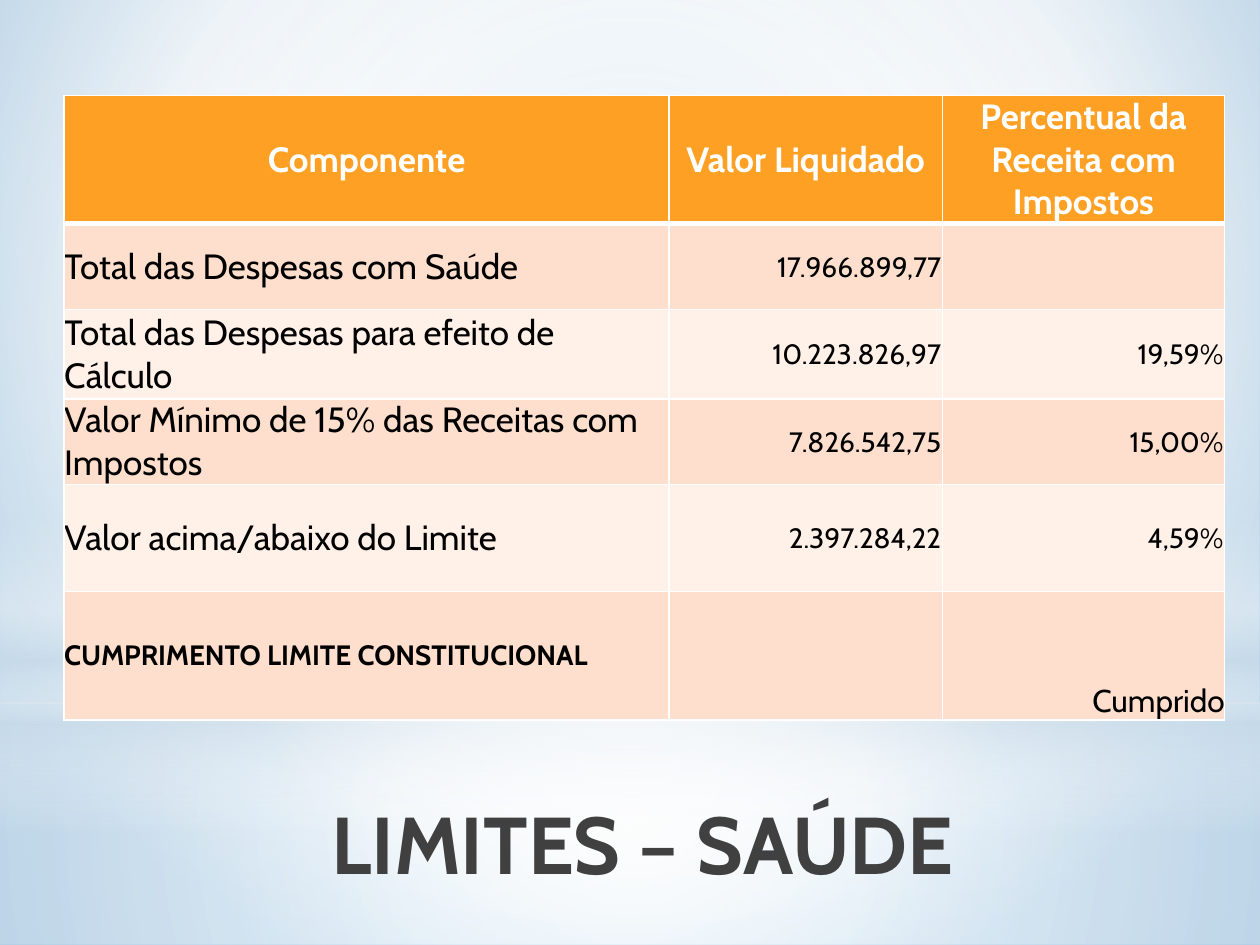
from dataclasses import dataclass
from lxml.etree import SubElement
from pptx import Presentation
from pptx.dml.color import RGBColor
from pptx.enum.shapes import MSO_SHAPE
from pptx.enum.text import MSO_ANCHOR, MSO_AUTO_SIZE, PP_ALIGN
from pptx.oxml import parse_xml
from pptx.oxml.ns import nsdecls, qn
from pptx.util import Inches, Pt


@dataclass(frozen=True)
class Theme:
    font: str = "Cabin"
    ink: str = "000000"
    white: str = "FFFFFF"
    mist: str = "CCDDEA"
    gray: str = "404040"
    head: str = "FDA023"
    bands: tuple = ("FEDFCD", "FFF0E8")
    title: int = 46
    large: int = 20
    mid: int = 18
    small: int = 16


T = Theme()
WIDE, HIGH = 10, 7.5
TITLE = "LIMITES – SAÚDE"
TITLE_BOX = (1.54, 6.25, 7.12, 1.25)
TABLE_AT = (0.51, 0.76)
COLS = (4.8, 2.17, 2.24)
HEIGHTS = (0.91, 0.68, 0.71, 0.68, 0.85, 1.02)
ROWS = (
    ("Componente", "Valor Liquidado", "Percentual da Receita com Impostos"),
    ("Total das Despesas com Saúde", "17.966.899,77", ""),
    ("Total das Despesas para efeito de Cálculo", "10.223.826,97", "19,59%"),
    ("Valor Mínimo de 15% das Receitas com Impostos", "7.826.542,75", "15,00%"),
    ("Valor acima/abaixo do Limite", "2.397.284,22", "4,59%"),
    ("CUMPRIMENTO LIMITE CONSTITUCIONAL", "", "Cumprido"),
)

# Gradient stops: position, colour, opacity (all shares in percent)
SKY = ((0, "BCD5E8", 100), (60, T.white, 100), (100, "82B6DE", 100))
FLOOR = ((0, T.white, 91), (37, T.white, 76), (100, T.mist, 79))
WALL = ((0, T.white, 89), (48, T.white, 62), (100, T.mist, 79))
HAZE = ((0, T.white, 0), (29, T.white, 30), (45, T.mist, 40),
        (55, T.white, 26), (65, T.mist, 60), (100, T.white, 0))
GLOW = ((0, T.white, 100), (56, T.white, 0))
MID = (50, 50, 50, 50)
LINEAR = None

# Full-width panels: shape, top, height, stops, gradient focus
PANELS = (
    (MSO_SHAPE.RECTANGLE, 5.58, 1.92, FLOOR, MID),
    (MSO_SHAPE.RECTANGLE, 0, 5.58, WALL, MID),
    (MSO_SHAPE.RECTANGLE, 4.12, 2.5, HAZE, LINEAR),
    (MSO_SHAPE.OVAL, 1.75, 5.58, GLOW, MID),
)


def shade(props, stops, focus):
    """Swap the solid fill in props for a gradient, downward if focus is None."""
    marks = "".join(
        f'<a:gs pos="{at * 1000}"><a:srgbClr val="{tint}">'
        f'<a:alpha val="{alpha * 1000}"/></a:srgbClr></a:gs>'
        for at, tint, alpha in stops)
    if focus is LINEAR:
        way = '<a:lin ang="5400000" scaled="0"/>'
    else:
        edges = " ".join(f'{side}="{part * 1000}"' for side, part in zip("ltrb", focus))
        way = f'<a:path path="circle"><a:fillToRect {edges}/></a:path>'
    grad = parse_xml(f'<a:gradFill {nsdecls("a")} rotWithShape="1">'
                     f'<a:gsLst>{marks}</a:gsLst>{way}</a:gradFill>')
    props.replace(props.find(qn("a:solidFill")), grad)


def write(frame, text, size, tint, bold, align):
    frame.text = text
    para = frame.paragraphs[0]
    para.alignment = align
    font = para.font
    font.name, font.size, font.bold = T.font, Pt(size), bold
    font.color.rgb = RGBColor.from_string(tint)


def border(cell, row):
    """Draw white edges, thick between the header and the body."""
    props = cell._tc.get_or_add_tcPr()
    thick = {0: "B", 1: "T"}.get(row)
    for spot, side in enumerate("LRTB"):
        width = Pt(3 if side == thick else 1)
        line = SubElement(props, qn(f"a:ln{side}"), w=str(width))
        fill = SubElement(line, qn("a:solidFill"))
        SubElement(fill, qn("a:srgbClr"), val=T.white)
        props.insert(spot, line)


def style(row, col):
    """Return size, colour, bold and alignment for a table cell."""
    last = row == len(ROWS) - 1
    if row == 0:
        return T.large, T.white, True, PP_ALIGN.CENTER
    if col == 0:
        return T.small if last else T.large, T.ink, last, PP_ALIGN.LEFT
    return T.mid if last else T.small, T.ink, False, PP_ALIGN.RIGHT


def add_backdrop(slide):
    fill = slide.background.fill
    fill.solid()
    shade(slide._element.find(".//" + qn("p:bgPr")), SKY, (20, 10, 20, 60))
    for kind, top, height, stops, focus in PANELS:
        panel = slide.shapes.add_shape(
            kind, 0, Inches(top), Inches(WIDE), Inches(height))
        panel.shadow.inherit = False
        panel.line.fill.background()
        panel.fill.solid()
        shade(panel._element.spPr, stops, focus)


def add_title(slide):
    title = slide.shapes.title
    title.left, title.top, title.width, title.height = map(Inches, TITLE_BOX)
    frame = title.text_frame
    frame.auto_size = MSO_AUTO_SIZE.NONE
    frame.vertical_anchor = MSO_ANCHOR.TOP
    write(frame, TITLE, T.title, T.gray, True, PP_ALIGN.CENTER)
    slide.shapes._spTree.append(title._element)  # in front of the panels


def add_limits(slide):
    size = (sum(COLS), sum(HEIGHTS))
    table = slide.shapes.add_table(
        len(ROWS), len(COLS), *map(Inches, TABLE_AT + size)).table
    for col, width in zip(table.columns, COLS):
        col.width = Inches(width)
    for r, texts in enumerate(ROWS):
        table.rows[r].height = Inches(HEIGHTS[r])
        for c, text in enumerate(texts):
            cell = table.cell(r, c)
            tint = T.bands[(r - 1) % 2] if r else T.head
            cell.fill.solid()
            cell.fill.fore_color.rgb = RGBColor.from_string(tint)
            border(cell, r)
            inset = Inches(0.01 if r and c and text != "Cumprido" else 0)
            cell.margin_left = cell.margin_right = cell.margin_top = inset
            cell.margin_bottom = 0
            low = text == "Cumprido"
            cell.vertical_anchor = MSO_ANCHOR.BOTTOM if low else MSO_ANCHOR.MIDDLE
            write(cell.text_frame, text, *style(r, c))


def main():
    deck = Presentation()
    deck.slide_width, deck.slide_height = Inches(WIDE), Inches(HIGH)
    slide = deck.slides.add_slide(deck.slide_layouts[5])
    add_backdrop(slide)
    add_title(slide)
    add_limits(slide)
    deck.save("out.pptx")


if __name__ == "__main__":
    main()
